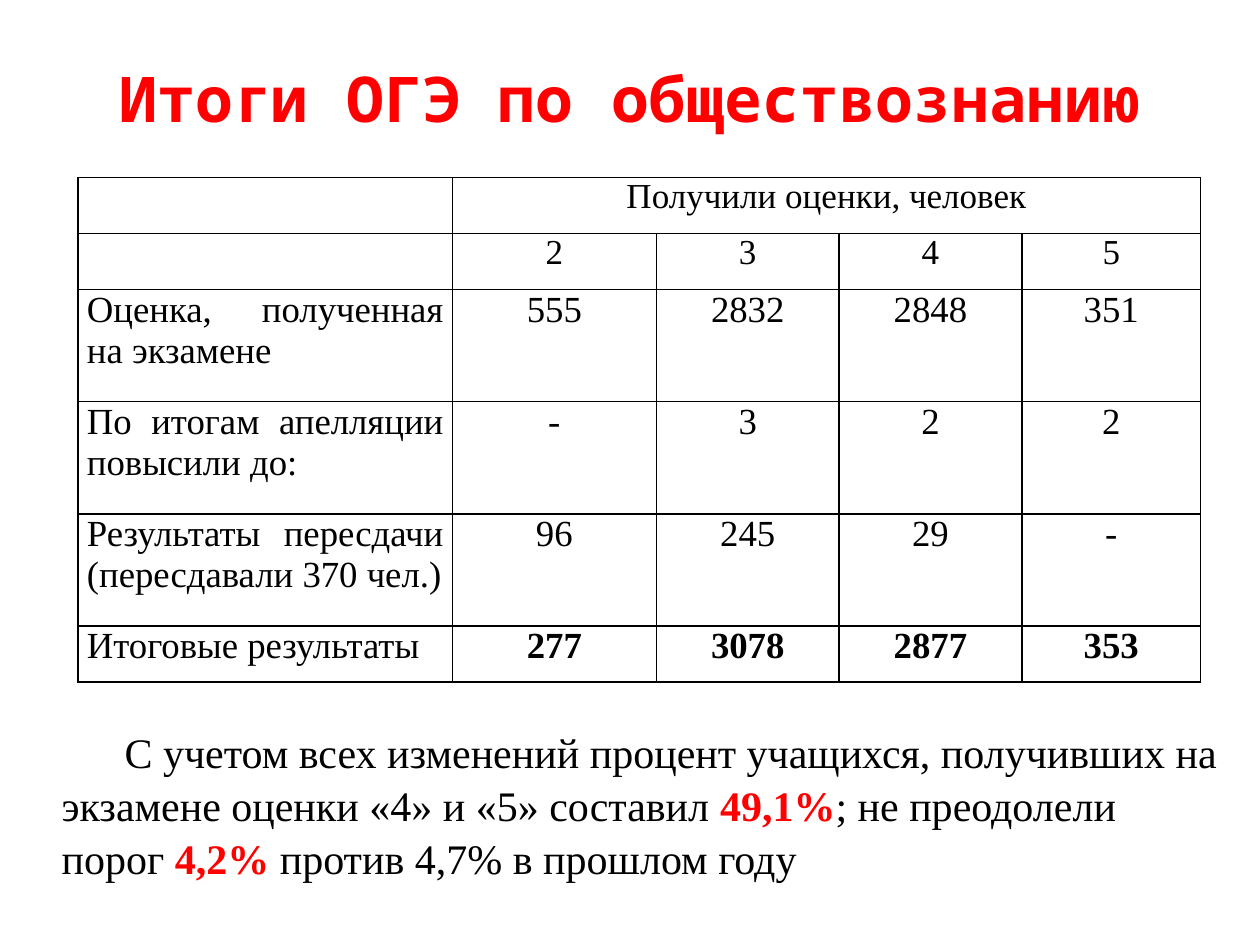
from typing import NamedTuple

from lxml import etree
from pptx import Presentation
from pptx.dml.color import RGBColor
from pptx.enum.text import MSO_ANCHOR, PP_ALIGN
from pptx.oxml.ns import qn
from pptx.util import Inches, Pt

CENTER, JUSTIFY, LEFT = PP_ALIGN.CENTER, PP_ALIGN.JUSTIFY, PP_ALIGN.LEFT
TOP, MIDDLE = MSO_ANCHOR.TOP, MSO_ANCHOR.MIDDLE
BLACK, RED = "000000", "FF0000"
SERIF, MONO = "Times New Roman", "Noto Sans Mono"
SLIDE_WIDTH, SLIDE_HEIGHT = 10, 7.5
COLUMN_WIDTHS = (2.97, 1.62, 1.45, 1.45, 1.42)
ROW_UNIT = 4.15 / 9.33
ROW_SHARES = (1, 1, 2, 2, 2, 1)


class Span(NamedTuple):
    text: str
    size: float
    color: str = BLACK
    bold: bool = False
    name: str = SERIF


class Row(NamedTuple):
    label: str
    marks: tuple
    size: float = 21
    bold: bool = False


ROWS = (
    Row("", ("Получили оценки, человек",), 20),
    Row("", ("2", "3", "4", "5"), 20),
    Row("Оценка, полученная на экзамене", ("555", "2832", "2848", "351")),
    Row("По итогам апелляции повысили до:", ("-", "3", "2", "2")),
    Row("Результаты пересдачи (пересдавали 370 чел.)", ("96", "245", "29", "-")),
    Row("Итоговые результаты", ("277", "3078", "2877", "353"), bold=True),
)
SUMMARY = (
    Span("С учетом всех изменений процент учащихся, получивших на "
         "экзамене оценки «4» и «5» составил ", 24),
    Span("49,1%", 24, RED, True),
    Span("; не преодолели порог ", 24),
    Span("4,2% ", 24, RED, True),
    Span("против 4,7% в прошлом году", 24),
)


def rgb(color: str) -> RGBColor:
    return RGBColor.from_string(color)


def write(para, spans, align) -> None:
    para.alignment = align
    for span in spans:
        run = para.add_run()
        run.text = span.text
        for key, value in {"size": Pt(span.size), "bold": span.bold, "name": span.name}.items():
            setattr(run.font, key, value)
        run.font.color.rgb = rgb(span.color)


def add_text(page, left, top, width, height, spans, align, anchor):
    box = page.shapes.add_textbox(*map(Inches, (left, top, width, height)))
    box.text_frame.word_wrap = True
    box.text_frame.vertical_anchor = anchor
    para = box.text_frame.paragraphs[0]
    write(para, spans, align)
    return para


def format_cell(cell) -> None:
    """Set narrow margins, thin black borders and no fill."""
    side, none = Inches(0.07), Inches(0)
    margins = {"margin_left": side, "margin_right": side, "margin_top": none, "margin_bottom": none}
    for key, value in margins.items():
        setattr(cell, key, value)
    properties = cell._tc.get_or_add_tcPr()
    for edge in ("a:lnL", "a:lnR", "a:lnT", "a:lnB"):
        line = etree.SubElement(properties, qn(edge), w=str(Pt(1)))
        fill = etree.SubElement(line, qn("a:solidFill"))
        etree.SubElement(fill, qn("a:srgbClr"), val=BLACK)
    cell.fill.background()


def add_results(page) -> None:
    frame = page.shapes.add_table(len(ROWS), len(COLUMN_WIDTHS), Inches(0.62), Inches(1.41),
                                  Inches(sum(COLUMN_WIDTHS)), Inches(ROW_UNIT * sum(ROW_SHARES)))
    table = frame.table
    for column, width in zip(table.columns, COLUMN_WIDTHS):
        column.width = Inches(width)
    for line, share in zip(table.rows, ROW_SHARES):
        line.height = Inches(ROW_UNIT * share)
    for index, row in enumerate(ROWS):
        for column in range(len(COLUMN_WIDTHS)):
            format_cell(table.cell(index, column))
        if row.label:
            write(table.cell(index, 0).text_frame.paragraphs[0],
                  [Span(row.label, row.size)], JUSTIFY)
        for column, mark in enumerate(row.marks, start=1):
            write(table.cell(index, column).text_frame.paragraphs[0],
                  [Span(mark, row.size, bold=row.bold)], CENTER)
    table.cell(0, 1).merge(table.cell(0, len(COLUMN_WIDTHS) - 1))


def main() -> None:
    deck = Presentation()
    deck.slide_width, deck.slide_height = Inches(SLIDE_WIDTH), Inches(SLIDE_HEIGHT)
    page = deck.slides.add_slide(deck.slide_layouts[6])
    title = Span("Итоги ОГЭ по обществознанию", 36, RED, True, MONO)
    add_text(page, 0.5, 0.3, 0.9 * SLIDE_WIDTH, 0.95, [title], CENTER, MIDDLE)
    add_results(page)
    para = add_text(page, 0.39, 5.7, 9.38, 1.31, SUMMARY, LEFT, TOP)
    para.line_spacing = 1.05
    para._p.get_or_add_pPr().set("indent", str(Inches(0.5)))
    deck.save("out.pptx")


if __name__ == "__main__":
    main()
